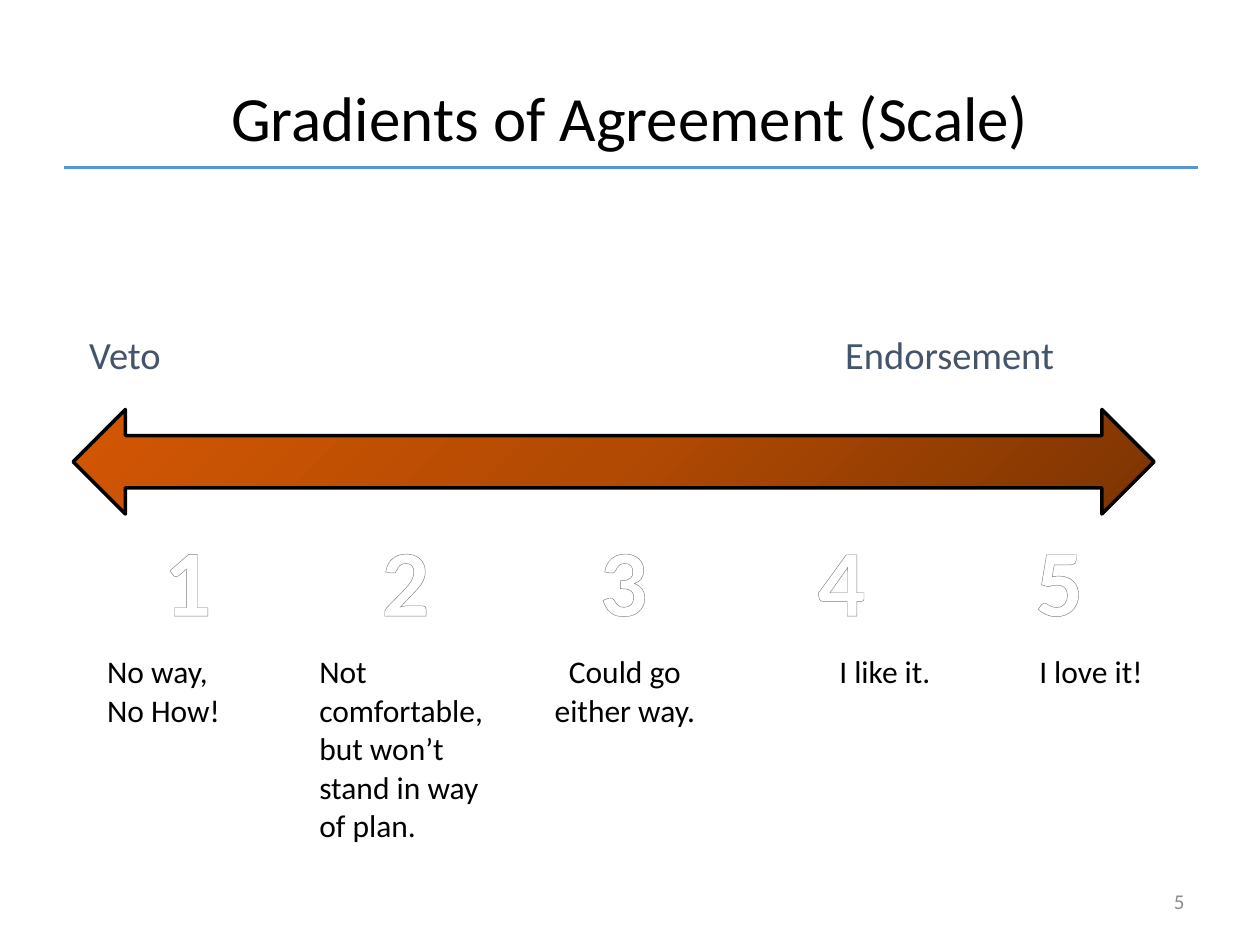
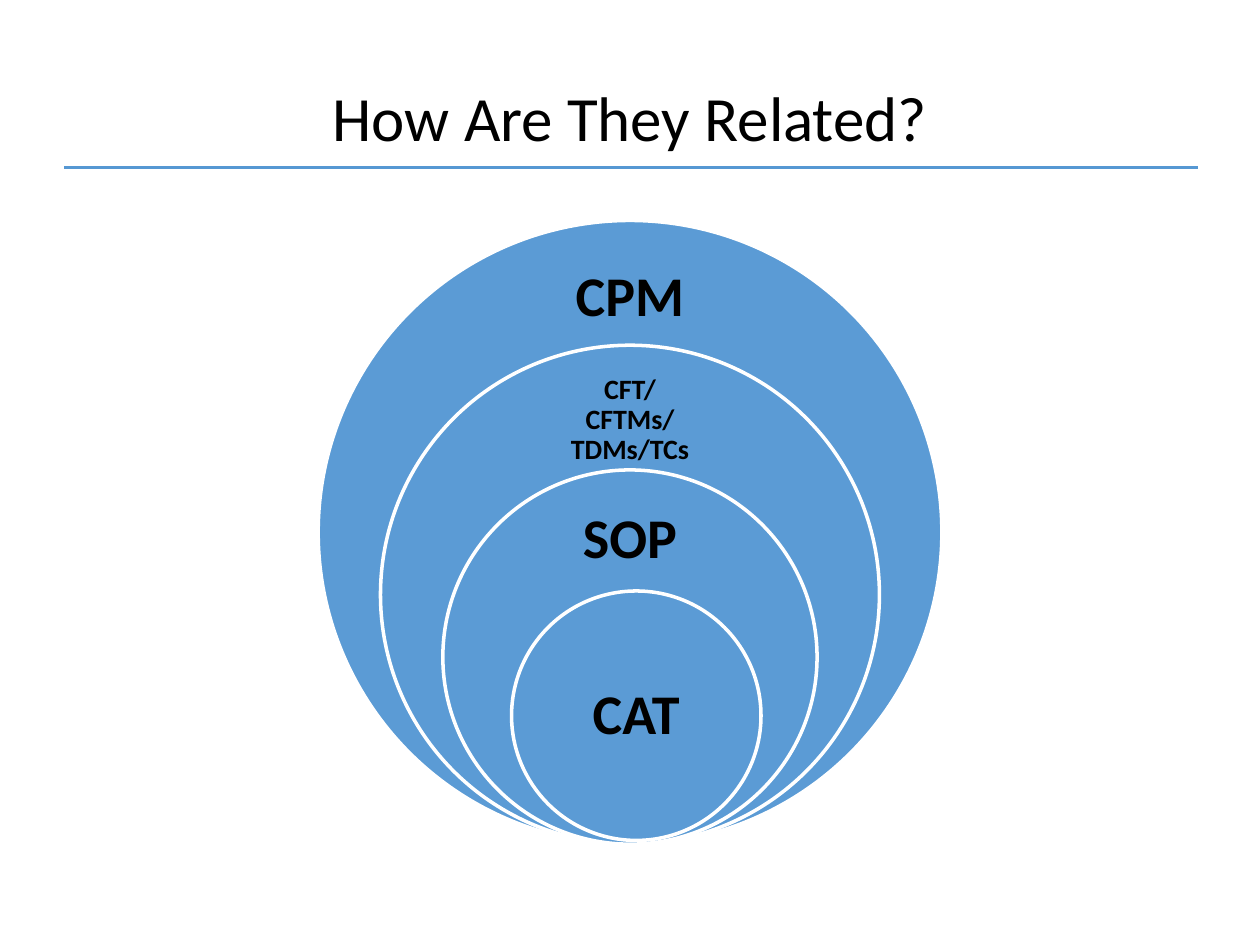
"""Build two slides: an agreement scale and a set of nested circles."""
import pptx
import pptx.dml.color
import pptx.enum.shapes
import pptx.enum.text
import pptx.oxml
import pptx.oxml.ns
import pptx.util

Inches, Pt = pptx.util.Inches, pptx.util.Pt
ALIGN = pptx.enum.text.PP_ALIGN
ANCHOR = pptx.enum.text.MSO_ANCHOR
SHAPE = pptx.enum.shapes.MSO_SHAPE
qn = pptx.oxml.ns.qn

FONT = "Calibri"
COLORS = {
    "text": "000000", "rule": "5698D3", "ends": "44546A", "page": "8C8C8C",
    "circle": "5B9BD5", "ring": "FFFFFF", "numeral_edge": "7D7D7D",
}
ARROW_STOPS = [(0, "7D3402"), (50, "B24A03"), (100, "D35704")]
NUMERAL_STOPS = [(0, "FFFFFF"), (9, "FFFFFF"), (50, "7F7F7F"), (79, "FFFFFF"), (100, "FFFFFF")]

SCALE_TITLE = "Gradients of Agreement (Scale)"
SCALE_ENDS = ("Veto", "Endorsement")
SCALE_PAGE = "5"
SCALE_STEPS = [
    ("1", ["No way,", "No How!"], ALIGN.LEFT),
    ("2", ["Not comfortable, but won’t stand in way of plan."], ALIGN.LEFT),
    ("3", ["Could go either way."], ALIGN.CENTER),
    ("4", ["I like it."], ALIGN.RIGHT),
    ("5", ["I love it!"], ALIGN.RIGHT),
]

RELATED_TITLE = "How Are They Related?"
# label, size, label top, label height, shift right, shift up
CIRCLES = [
    ("CPM", 32, 2.0, 0.74, 0, 0),
    ("CFT/CFTMs/TDMs/TCs", 16, 2.98, 0.71, 0, 0),
    ("SOP", 32, 3.95, 0.67, 0, 0),
    ("CAT", 32, 5.19, 0.99, 0.05, 0.03),
]


def rgb(name):
    return pptx.dml.color.RGBColor.from_string(COLORS[name])


def add_run(paragraph, text, size, color="text", bold=False):
    run = paragraph.add_run()
    run.text = text
    run.font.name, run.font.size, run.font.bold = FONT, Pt(size), bold
    run.font.color.rgb = rgb(color)
    return run


def add_text(slide, box, text, size, color="text", align=ALIGN.LEFT,
             anchor=ANCHOR.TOP, bold=False, tabs=()):
    frame = slide.shapes.add_textbox(*map(Inches, box)).text_frame
    frame.word_wrap, frame.vertical_anchor = True, anchor
    paragraph = frame.paragraphs[0]
    paragraph.alignment = align
    if tabs:
        tab_list = pptx.oxml.parse_xml(f'<a:tabLst {pptx.oxml.ns.nsdecls("a")}/>')
        for position, kind in tabs:
            tab_list.append(pptx.oxml.parse_xml(
                f'<a:tab {pptx.oxml.ns.nsdecls("a")} pos="{Inches(position)}" algn="{kind}"/>'))
        paragraph._p.get_or_add_pPr().append(tab_list)
    return frame, add_run(paragraph, text, size, color, bold)


def set_gradient(fill, properties, stops, angle):
    fill.gradient()
    fill.gradient_angle = 360 - angle
    stop_list = properties.find(qn("a:gradFill")).find(qn("a:gsLst"))
    for default_stop in list(stop_list):
        stop_list.remove(default_stop)
    for percent, color in stops:
        stop_list.append(pptx.oxml.parse_xml(
            f'<a:gs {pptx.oxml.ns.nsdecls("a")} pos="{percent * 1000}">'
            f'<a:srgbClr val="{color}"/></a:gs>'))


def add_shape(slide, preset, box, line):
    shape = slide.shapes.add_shape(preset, *map(Inches, box))
    shape.shadow.inherit = False
    shape.line.color.rgb, shape.line.width = rgb(line), Pt(2)
    return shape


def add_titled_slide(deck, title):
    slide = deck.slides.add_slide(deck.slide_layouts[6])
    rule = slide.shapes.add_connector(
        pptx.enum.shapes.MSO_CONNECTOR.STRAIGHT, *map(Inches, (0.51, 1.33, 9.51, 1.33)))
    rule.line.color.rgb, rule.line.width = rgb("rule"), Pt(1.75)
    rule._element.spPr.append(
        pptx.oxml.parse_xml(f'<a:effectLst {pptx.oxml.ns.nsdecls("a")}/>'))
    add_text(slide, (0.5, 0.3, 9, 1.25), title, 36, align=ALIGN.CENTER, anchor=ANCHOR.MIDDLE)
    return slide


def add_numerals(slide, left, width):
    first, step = 0.64, 1.73
    tabs = [(first + step * i, "ctr") for i in range(len(SCALE_STEPS))]
    numerals = "".join("\t" + number for number, _, _ in SCALE_STEPS)
    _, run = add_text(slide, (left, 4.09, width, 1.01), numerals, 54, bold=True, tabs=tabs)
    properties = run._r.get_or_add_rPr()
    set_gradient(run.font.fill, properties, NUMERAL_STOPS, 90)
    properties.insert(0, pptx.oxml.parse_xml(
        f'<a:ln {pptx.oxml.ns.nsdecls("a")} w="{Pt(0.83)}"><a:solidFill>'
        f'<a:srgbClr val="{COLORS["numeral_edge"]}"/></a:solidFill></a:ln>'))


def add_meanings(slide, left, width):
    box = map(Inches, (left, 5.14, width, 1.86))
    meanings = slide.shapes.add_table(1, len(SCALE_STEPS), *box).table
    meanings.first_row = meanings.horz_banding = False
    for column, (_, lines, align) in enumerate(SCALE_STEPS):
        meanings.columns[column].width = Inches(width / len(SCALE_STEPS))
        cell = meanings.cell(0, column)
        cell.fill.background()
        for i, line in enumerate(lines):
            frame = cell.text_frame
            paragraph = frame.add_paragraph() if i else frame.paragraphs[0]
            paragraph.alignment = align
            add_run(paragraph, line, 18)


def build_scale(deck):
    slide = add_titled_slide(deck, SCALE_TITLE)
    add_text(slide, (0.61, 2.58, 9.13, 0.5), "\t".join(SCALE_ENDS), 22, "ends", tabs=[(6, "l")])
    arrow = add_shape(slide, SHAPE.LEFT_RIGHT_ARROW, (0.58, 3.25, 8.58, 0.83), "text")
    set_gradient(arrow.fill, arrow._element.spPr, ARROW_STOPS, 225)
    left, width = 0.75, 8.42
    add_numerals(slide, left, width)
    add_meanings(slide, left, width)
    add_text(slide, (7.17, 6.95, 2.33, 0.4), SCALE_PAGE, 12, "page", ALIGN.RIGHT, ANCHOR.MIDDLE)


def build_related(deck):
    slide = add_titled_slide(deck, RELATED_TITLE)
    outer, center, bottom, label_width, inset = 4.95, 5, 6.7, 1.38, 0.12
    for i, (label, size, top, height, right, up) in enumerate(CIRCLES):
        diameter = outer * (1 - i / 5)
        middle = center + right
        circle = add_shape(
            slide, SHAPE.OVAL,
            (middle - diameter / 2, bottom - up - diameter, diameter, diameter), "ring")
        circle.fill.solid()
        circle.fill.fore_color.rgb = rgb("circle")
        frame, _ = add_text(slide, (middle - label_width / 2, top, label_width, height),
                            label, size, align=ALIGN.CENTER, anchor=ANCHOR.MIDDLE, bold=True)
        frame.margin_left = frame.margin_right = Inches(inset)
        frame.margin_top = frame.margin_bottom = Inches(inset)
        frame.paragraphs[0].line_spacing = 0.9


def main():
    deck = pptx.Presentation()
    deck.slide_width, deck.slide_height = Inches(10), Inches(7.5)
    build_scale(deck)
    build_related(deck)
    deck.save("out.pptx")


if __name__ == "__main__":
    main()
